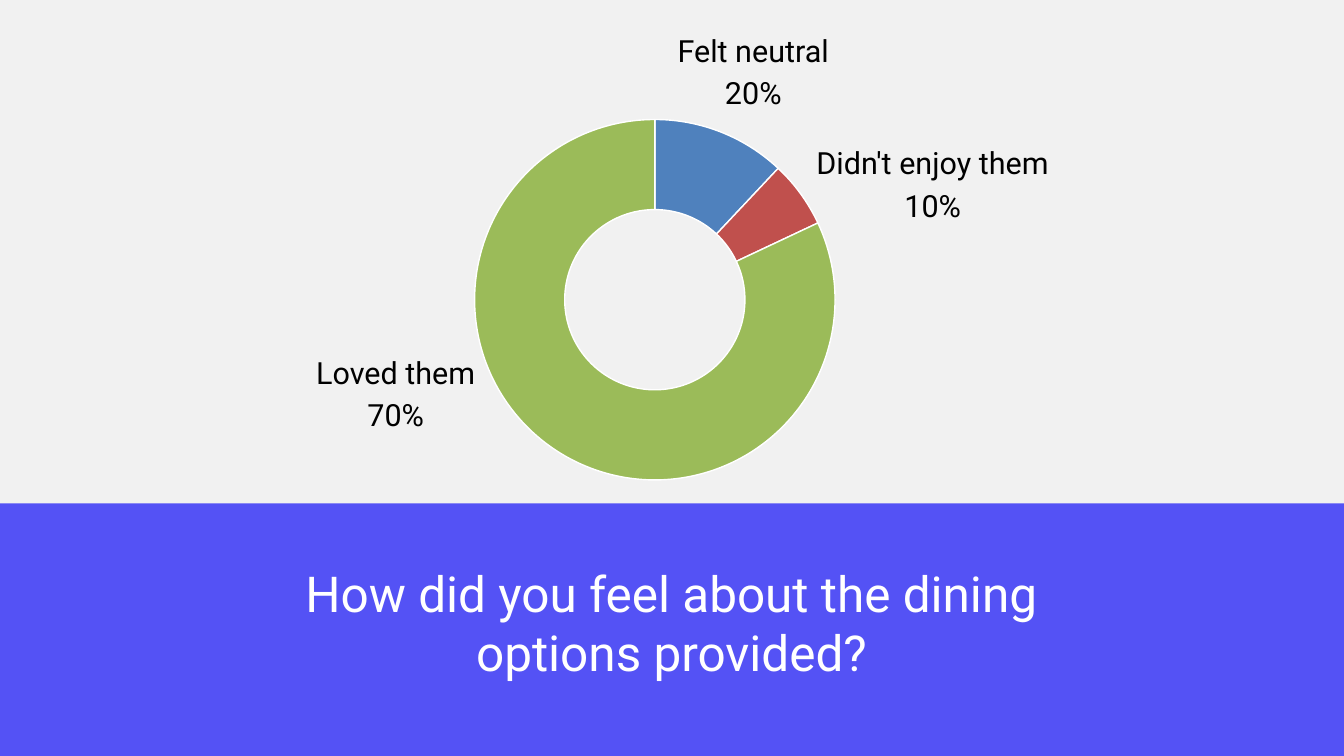
"""Builds a survey slide with a doughnut chart above a question band."""
from dataclasses import dataclass

from pptx import Presentation
from pptx.chart import data
from pptx.dml.color import RGBColor
from pptx.enum import chart as charts, shapes, text
from pptx.slide import Slide
from pptx.text.text import TextFrame
from pptx.util import Inches, Pt


@dataclass(frozen=True)
class Theme:
    """Colours, font and type sizes of the slide."""
    background: RGBColor = RGBColor(0xF1, 0xF1, 0xF1)
    band: RGBColor = RGBColor(0x54, 0x52, 0xF5)
    ink: RGBColor = RGBColor(0, 0, 0)
    white: RGBColor = RGBColor(0xFF, 0xFF, 0xFF)
    font: str = "Roboto"
    chart_font: str = "Calibri"
    label_size: float = 32.7
    label_spacing: float = 45.8
    title_size: float = 53
    title_spacing: float = 63.6
    chart_size: float = 10


@dataclass(frozen=True)
class Answer:
    """One answer with its label box and its slice of the ring."""
    label: str
    share: str
    left: float
    top: float
    width: float
    slice_value: int
    color: RGBColor


THEME = Theme()
QUESTION = "How did you feel about the dining options provided?"
LABEL_HEIGHT = 1.26
ANSWERS = [
    Answer("Felt neutral", "20%", 10, 0.38, 2.42, 12, RGBColor(0x4F, 0x81, 0xBD)),
    Answer("Didn't enjoy them", "10%", 12.03, 2.05, 3.7, 6, RGBColor(0xC0, 0x50, 0x4D)),
    Answer("Loved them", "70%", 4.67, 5.17, 2.44, 82, RGBColor(0x9B, 0xBB, 0x59)),
]


def write(frame: TextFrame, content: str, size: float, spacing: float, color: RGBColor) -> None:
    """Fill a text frame with centred text, one paragraph a line."""
    frame.text = content
    frame.word_wrap = True
    frame.auto_size = text.MSO_AUTO_SIZE.NONE
    frame.vertical_anchor = text.MSO_ANCHOR.TOP
    frame.margin_left = frame.margin_right = frame.margin_top = frame.margin_bottom = 0
    for paragraph in frame.paragraphs:
        paragraph.alignment = text.PP_ALIGN.CENTER
        paragraph.line_spacing = Pt(spacing)
        paragraph.space_before = Pt(0)
        for run in paragraph.runs:
            run.font.name = THEME.font
            run.font.size = Pt(size)
            run.font.color.rgb = color


def add_question(slide: Slide) -> None:
    """Put the question in the title placeholder over a coloured band."""
    band = slide.shapes.add_shape(
        shapes.MSO_SHAPE.RECTANGLE, Inches(0), Inches(7.49), Inches(20), Inches(3.76))
    band.shadow.inherit = False
    band.fill.solid()
    band.fill.fore_color.rgb = THEME.band
    band.line.fill.background()

    title = slide.shapes.title
    title.element.addprevious(band.element)
    title.left, title.top = Inches(3.86), Inches(8.38)
    title.width, title.height = Inches(12.27), Inches(1.78)
    write(title.text_frame, QUESTION, THEME.title_size, THEME.title_spacing, THEME.white)


def add_label(slide: Slide, answer: Answer) -> None:
    """Add the name and share of an answer beside the ring."""
    box = slide.shapes.add_textbox(
        Inches(answer.left), Inches(answer.top), Inches(answer.width), Inches(LABEL_HEIGHT))
    write(box.text_frame, f"{answer.label}\n{answer.share}",
          THEME.label_size, THEME.label_spacing, THEME.ink)


def add_doughnut(slide: Slide, answers: list[Answer]) -> None:
    """Add the doughnut chart with one coloured slice for each answer."""
    chart_data = data.CategoryChartData()
    chart_data.categories = [str(number) for number in range(1, len(answers) + 1)]
    chart_data.add_series("Series 1", [answer.slice_value for answer in answers])
    chart = slide.shapes.add_chart(
        charts.XL_CHART_TYPE.DOUGHNUT, Inches(5.58), Inches(1.64),
        Inches(8.33), Inches(5.64), chart_data).chart
    chart.has_legend = False
    chart.has_title = False
    chart.font.name = THEME.chart_font
    chart.font.size = Pt(THEME.chart_size)
    chart.font.color.rgb = THEME.ink
    plot = chart.plots[0]
    plot.vary_by_categories = True
    for index, answer in enumerate(answers):
        point = plot.series[0].points[index]
        point.format.fill.solid()
        point.format.fill.fore_color.rgb = answer.color
        point.format.line.color.rgb = THEME.white
        point.format.line.width = Pt(1.5)


def main() -> None:
    """Build and save the presentation."""
    presentation = Presentation()
    presentation.slide_width = Inches(20)
    presentation.slide_height = Inches(11.25)
    slide = presentation.slides.add_slide(presentation.slide_layouts.get_by_name("Title Only"))
    slide.background.fill.solid()
    slide.background.fill.fore_color.rgb = THEME.background
    add_question(slide)
    for answer in ANSWERS:
        add_label(slide, answer)
    add_doughnut(slide, ANSWERS)
    presentation.save("out.pptx")


if __name__ == "__main__":
    main()
